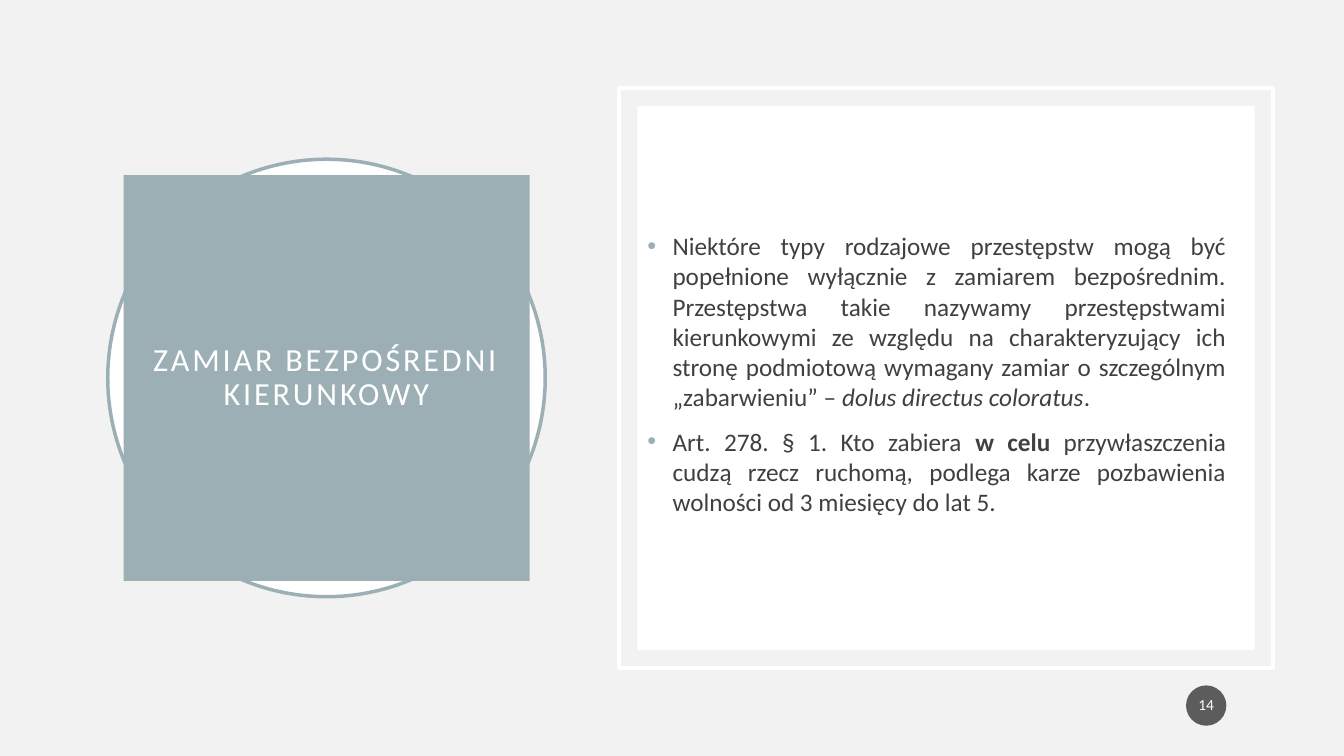
from lxml.etree import SubElement as Sub
from pptx import Presentation
from pptx.dml.color import RGBColor as Rgb
from pptx.enum.shapes import MSO_SHAPE as Shape
from pptx.enum.text import MSO_ANCHOR as Anchor, MSO_AUTO_SIZE as Fit, PP_ALIGN as Align
from pptx.oxml.ns import qn
from pptx.util import Pt


def tint(hue):
    """Turn a hex string into a colour."""
    return Rgb.from_string(hue)


class Deck:
    """Hold the style and the current slide."""

    font, teal, white, ink, dark = "Calibri", "9BAFB5", "FFFFFF", "404040", "1D1D1D"

    def __init__(self, wide, high, back):
        """Open a deck with one title-only slide."""
        self.prs = Presentation()
        self.prs.slide_width, self.prs.slide_height = Pt(wide), Pt(high)
        self.slide = self.prs.slides.add_slide(self.prs.slide_layouts[5])
        self.items = self.slide.shapes
        fill = self.slide.background.fill
        fill.solid()
        fill.fore_color.rgb = tint(back)

    def shape(self, kind, box, fill=None, line=None, alpha=None):
        """Draw a preset shape."""
        item = self.items.add_shape(kind, *map(Pt, box))
        item.shadow.inherit = False
        if fill:
            item.fill.solid()
            item.fill.fore_color.rgb = tint(fill)
        else:
            item.fill.background()
        if line:
            item.line.color.rgb = tint(line)
            item.line.width = Pt(2.5)
        else:
            item.line.fill.background()
        if alpha:
            hue = item.fill._xPr.find(".//" + qn("a:srgbClr"))
            Sub(hue, qn("a:alpha"), val=str(alpha * 1000))
        return item

    def frame(self, item, pads):
        """Set the margins and anchor of a text frame."""
        text = item.text_frame
        text.word_wrap, text.auto_size = True, Fit.NONE
        text.vertical_anchor = Anchor.MIDDLE
        text.margin_left = text.margin_right = Pt(pads[0])
        text.margin_top = text.margin_bottom = Pt(pads[1])
        return text

    def style(self, run, size, hue):
        """Set the font of a run."""
        run.font.name, run.font.size = self.font, Pt(size)
        run.font.color.rgb = tint(hue)

    def label(self, item, words, size, pads):
        """Write centred white text in a shape."""
        text = self.frame(item, pads)
        text.text = words
        para = text.paragraphs[0]
        para.alignment, para.line_spacing = Align.CENTER, 0.9
        self.style(para.runs[0], size, self.white)
        return para

    def title(self, box, words):
        """Place the title above the shapes drawn so far."""
        item = self.items.title
        self.items._spTree.append(item._element)
        item.left, item.top, item.width, item.height = map(Pt, box)
        item.fill.solid()
        item.fill.fore_color.rgb = tint(self.teal)
        para = self.label(item, words, 23, (14.4, 14.4))
        para.runs[0].font._element.set("spc", "200")

    def bullets(self, box, paras):
        """Write justified bullets from (words, look) pairs."""
        text = self.frame(self.items.add_textbox(*map(Pt, box)), (7.2, 3.6))
        for i, parts in enumerate(paras):
            para = text.add_paragraph() if i else text.paragraphs[0]
            para.alignment, para.space_before = Align.JUSTIFY, Pt(10)
            for words, look in parts:
                run = para.add_run()
                run.text = words
                self.style(run, 18, self.ink)
                run.font.bold, run.font.italic = look == "b", look == "i"
            prop = para._p.get_or_add_pPr()
            prop.set("marL", str(Pt(18)))
            prop.set("indent", str(-Pt(18)))
            Sub(Sub(prop, qn("a:buClr")), qn("a:srgbClr"), val=self.teal)
            Sub(prop, qn("a:buFont"), typeface="Arial")
            Sub(prop, qn("a:buChar"), char="•")


def main():
    """Build the slide."""
    deck = Deck(960, 540, "F2F2F2")
    deck.shape(Shape.OVAL, (77, 113.75, 312.5, 312.5), deck.white, deck.teal)
    deck.title((88.25, 125, 290, 290), "ZAMIAR BEZPOŚREDNI KIERUNKOWY")
    deck.shape(Shape.RECTANGLE, (442.3, 62.8, 467, 414.5), line=deck.white)
    deck.shape(Shape.RECTANGLE, (455.3, 75.8, 441, 388.5), deck.white)
    deck.bullets((455.3, 87.8, 427.5, 358), [
        [("Niektóre typy rodzajowe przestępstw mogą być popełnione wyłącznie "
          "z zamiarem bezpośrednim. Przestępstwa takie nazywamy przestępstwami "
          "kierunkowymi ze względu na charakteryzujący ich stronę podmiotową "
          "wymagany zamiar o szczególnym „zabarwieniu” – ", ""),
         ("dolus directus coloratus", "i"), (".", "")],
        [("Art. 278. § 1. Kto zabiera ", ""), ("w celu ", "b"),
         ("przywłaszczenia cudzą rzecz ruchomą, podlega karze pozbawienia "
          "wolności od 3 miesięcy do lat 5.", "")],
    ])
    badge = deck.shape(Shape.OVAL, (847.2, 489.6, 28.8, 28.8), deck.dark, alpha=70)
    deck.label(badge, "14", 11, (1.4, 3.6)).space_after = Pt(6)
    deck.prs.save("out.pptx")


if __name__ == "__main__":
    main()
